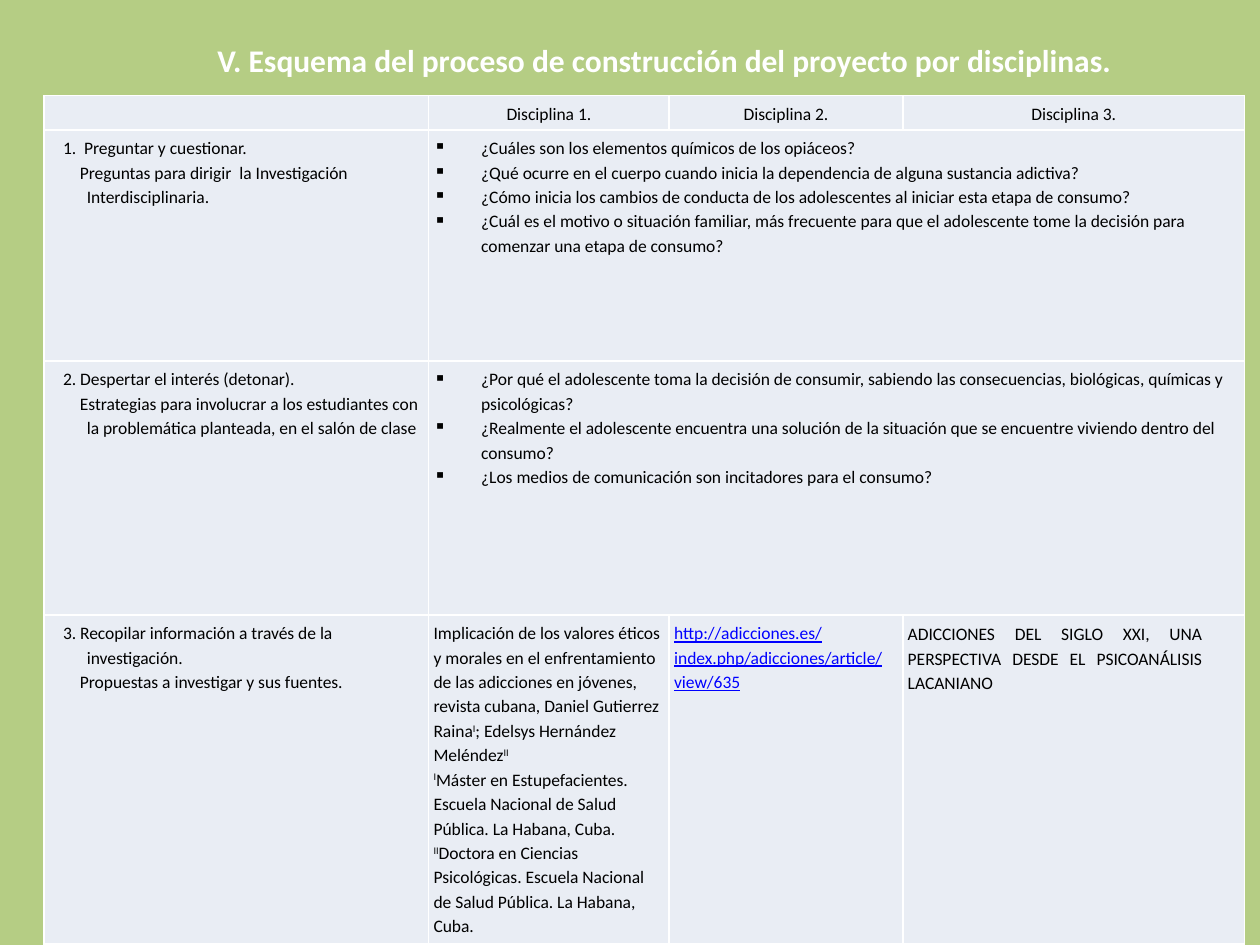
"""Build the slide with the project outline by discipline."""
from lxml.etree import SubElement
from pptx import Presentation
from pptx.dml.color import RGBColor
from pptx.enum.text import MSO_ANCHOR, PP_ALIGN
from pptx.oxml import parse_xml
from pptx.oxml.ns import nsdecls, qn
from pptx.util import Cm, Pt

GREEN = RGBColor(0xB5, 0xCD, 0x84)
PALE = RGBColor(0xE9, 0xED, 0xF4)
WHITE = RGBColor(0xFF, 0xFF, 0xFF)
BLACK = RGBColor(0x00, 0x00, 0x00)
BLUE = RGBColor(0x00, 0x00, 0xFF)
FONT = "Calibri"

TITLE = "V. Esquema del proceso de construcción del proyecto por disciplinas."
COLUMN_WIDTHS = (7.75, 4.85, 4.71, 6.89)
ROW_HEIGHTS = (0.69, 4.66, 5.12, 6.63)

STYLES = {
    "header": {"align": PP_ALIGN.CENTER},
    "step": {"left": 0.76, "first": -0.48},
    "detail": {"left": 0.76, "first": -0.14},
    "bullet": {"left": 0.96, "first": -0.96, "bullet": "▪"},
    "plain": {},
    "link": {"color": BLUE, "underline": True},
    "justified": {"align": PP_ALIGN.JUSTIFY, "right": 0.76, "spacing": Pt(14.2)},
}

ROWS = [
    [
        [],
        [("header", "Disciplina 1.")],
        [("header", "Disciplina 2.")],
        [("header", "Disciplina 3.")],
    ],
    [
        [
            ("step", "1.  Preguntar y cuestionar."),
            ("detail", "Preguntas para dirigir  la Investigación Interdisciplinaria."),
        ],
        [
            ("bullet", "¿Cuáles son los elementos químicos de los opiáceos?"),
            ("bullet", "¿Qué ocurre en el cuerpo cuando inicia la dependencia de alguna sustancia adictiva?"),
            ("bullet", "¿Cómo inicia los cambios de conducta de los adolescentes al iniciar esta etapa de consumo?"),
            ("bullet", "¿Cuál es el motivo o situación familiar, más frecuente para que el adolescente "
                       "tome la decisión para comenzar una etapa de consumo?"),
        ],
    ],
    [
        [
            ("step", "2. Despertar el interés (detonar)."),
            ("detail", "Estrategias para involucrar a los estudiantes con la problemática planteada, "
                       "en el salón de clase"),
        ],
        [
            ("bullet", "¿Por qué el adolescente toma la decisión de consumir, sabiendo las consecuencias, "
                       "biológicas, químicas y psicológicas?"),
            ("bullet", "¿Realmente el adolescente encuentra una solución de la situación que se encuentre "
                       "viviendo dentro del consumo?"),
            ("bullet", "¿Los medios de comunicación son incitadores para el consumo?"),
        ],
    ],
    [
        [
            ("step", "3. Recopilar información a través de la investigación."),
            ("detail", "Propuestas a investigar y sus fuentes."),
        ],
        [
            ("plain", "Implicación de los valores éticos y morales en el enfrentamiento de las adicciones "
                      "en jóvenes, revista cubana, Daniel Gutierrez Raina^I^; Edelsys Hernández Meléndez^II^"),
            ("plain", "^I^Máster en Estupefacientes. Escuela Nacional de Salud Pública. La Habana, Cuba."),
            ("plain", "^II^Doctora en Ciencias Psicológicas. Escuela Nacional de Salud Pública. La Habana, Cuba."),
        ],
        [("link", "http://adicciones.es/index.php/adicciones/article/view/635")],
        [("justified", "ADICCIONES DEL SIGLO XXI, UNA PERSPECTIVA DESDE EL PSICOANÁLISIS LACANIANO")],
    ],
]


def format_font(font, size, color):
    font.name = FONT
    font.size = Pt(size)
    font.color.rgb = color


def write_paragraph(para, style, text):
    para.alignment = style.get("align", PP_ALIGN.LEFT)
    para.line_spacing = style.get("spacing", 1.15)
    properties = para._p.get_or_add_pPr()
    for attribute, key in (("marL", "left"), ("marR", "right"), ("indent", "first")):
        properties.set(attribute, str(Cm(style.get(key, 0))))
    if "bullet" in style:
        SubElement(properties, qn("a:buChar")).set("char", style["bullet"])
    for number, part in enumerate(text.split("^")):
        if part:
            span = para.add_run()
            span.text = part
            format_font(span.font, 10, style.get("color", BLACK))
            span.font.underline = style.get("underline", False)
            if number % 2:
                span.font._element.set("baseline", "30000")


def format_cell(cell):
    cell.margin_left = cell.margin_right = cell.margin_top = cell.margin_bottom = Cm(0.1)
    cell.fill.solid()
    cell.fill.fore_color.rgb = PALE
    properties = cell._tc.get_or_add_tcPr()
    for position, side in enumerate("LRTB"):
        properties.insert(position, parse_xml(
            f'<a:ln{side} {nsdecls("a")} w="{Pt(1)}"><a:solidFill>'
            f'<a:srgbClr val="{WHITE}"/></a:solidFill></a:ln{side}>'))


def add_title(page):
    box = page.shapes.add_textbox(Cm(3.7), Cm(0.33), Cm(19.4), Cm(2))
    frame = box.text_frame
    frame.word_wrap = True
    frame.vertical_anchor = MSO_ANCHOR.MIDDLE
    frame.margin_bottom = Cm(0.38)
    frame.text = TITLE
    para = frame.paragraphs[0]
    para.alignment = PP_ALIGN.CENTER
    format_font(para.runs[0].font, 18, WHITE)
    para.runs[0].font.bold = True


def add_outline(page):
    table = page.shapes.add_table(
        len(ROW_HEIGHTS), len(COLUMN_WIDTHS), Cm(0.89), Cm(1.93),
        Cm(sum(COLUMN_WIDTHS)), Cm(sum(ROW_HEIGHTS))).table
    for column, width in zip(table.columns, COLUMN_WIDTHS):
        column.width = Cm(width)
    for row, height in zip(table.rows, ROW_HEIGHTS):
        row.height = Cm(height)
    for cell in table.iter_cells():
        format_cell(cell)
        cell.text_frame.paragraphs[0].font.size = Pt(10)
    for row_number, contents in enumerate(ROWS):
        if len(contents) == 2:
            table.cell(row_number, 1).merge(table.cell(row_number, 3))
        for column_number, paragraphs in enumerate(contents):
            frame = table.cell(row_number, column_number).text_frame
            for number, (style, text) in enumerate(paragraphs):
                para = frame.add_paragraph() if number else frame.paragraphs[0]
                write_paragraph(para, STYLES[style], text)


def main():
    deck = Presentation()
    deck.slide_width, deck.slide_height = Cm(25.4), Cm(19.05)
    page = deck.slides.add_slide(deck.slide_layouts[6])
    page.background.fill.solid()
    page.background.fill.fore_color.rgb = GREEN
    add_title(page)
    add_outline(page)
    deck.save("out.pptx")


if __name__ == "__main__":
    main()
